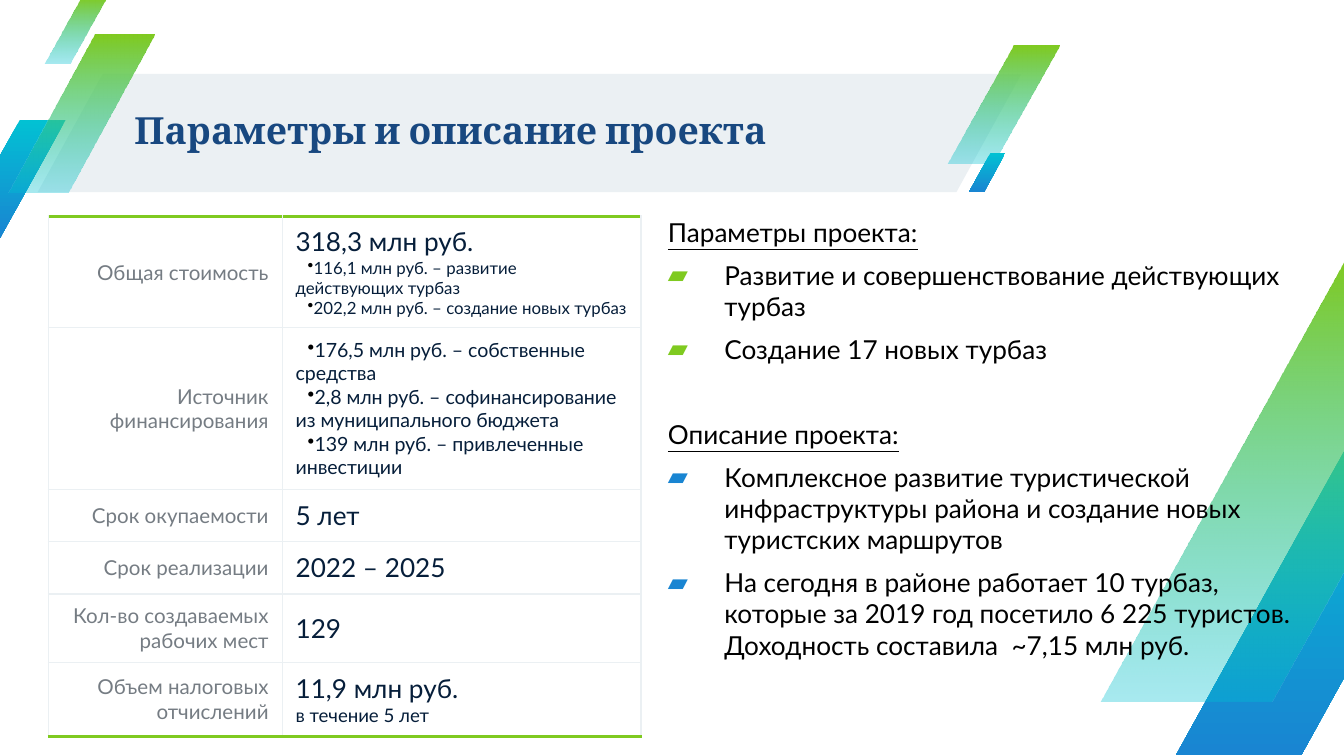
from typing import NamedTuple

import pptx
import pptx.dml.color
import pptx.enum.shapes
import pptx.enum.text
import pptx.oxml
import pptx.oxml.ns
import pptx.util

Inches, Pt = pptx.util.Inches, pptx.util.Pt
PP_ALIGN = pptx.enum.text.PP_ALIGN
MIDDLE = pptx.enum.text.MSO_ANCHOR.MIDDLE
SLANT = pptx.enum.shapes.MSO_SHAPE.PARALLELOGRAM
NS = pptx.oxml.ns.nsdecls("a")

HUES = {"band": "EBF0F3", "green": "7FCA20", "cyan": "02C1D3", "blue": "1985D2",
        "title": "184880", "label": "757C83", "value": "061E3A", "black": "000000"}


class Stripe(NamedTuple):
    left: float
    top: float
    width: float
    height: float
    hue: str


class Line(NamedTuple):
    text: str
    size: float = 14
    dot: bool = False


class Row(NamedTuple):
    label: str
    height: float
    lines: list[Line]


class Part(NamedTuple):
    head: str
    hue: str
    gap: float
    items: list[str]


STRIPES = [
    Stripe(-0.34, 0.89, 0.83, 0.88, "blue"),
    Stripe(7.05, 0.34, 0.83, 0.88, "green"),
    Stripe(0.06, 0.26, 1.09, 1.17, "green"),
    Stripe(0.33, -0.02, 0.46, 0.49, "green"),
    Stripe(7.21, 1.14, 0.27, 0.29, "blue"),
    Stripe(8.75, 3.2, 2.27, 2.42, "blue"),
    Stripe(8.19, 1.92, 3.1, 3.3, "green"),
]

ROWS = [
    Row("Общая стоимость", 0.83, [
        Line("318,3 млн руб."),
        Line("116,1 млн руб. – развитие действующих турбаз", 9, True),
        Line("202,2 млн руб. – создание новых турбаз", 9, True)]),
    Row("Источник финансирования", 1.2, [
        Line("176,5 млн руб. – собственные средства", 10.5, True),
        Line("2,8 млн руб. – софинансирование из муниципального бюджета", 10.5, True),
        Line("139 млн руб. – привлеченные инвестиции", 10.5, True)]),
    Row("Срок окупаемости", 0.39, [Line("5 лет")]),
    Row("Срок реализации", 0.39, [Line("2022 – 2025")]),
    Row("Кол-во создаваемых рабочих мест", 0.51, [Line("129")]),
    Row("Объем налоговых отчислений", 0.55, [
        Line("11,9 млн руб."), Line("в течение 5 лет", 10)]),
]

PARTS = [
    Part("Параметры проекта:", "green", 6, [
        "Развитие и совершенствование действующих турбаз",
        "Создание 17 новых турбаз"]),
    Part("Описание проекта:", "blue", 29, [
        "Комплексное развитие туристической инфраструктуры района и создание "
        "новых туристских маршрутов",
        "На сегодня в районе работает 10 турбаз, которые за 2019 год посетило "
        "6 225 туристов. Доходность составила  ~7,15 млн руб."]),
]


def color(hue: str) -> pptx.dml.color.RGBColor:
    return pptx.dml.color.RGBColor.from_string(HUES[hue])


def style(par, size: float, hue: str, face: str = "Lato") -> None:
    par.font.size, par.font.name = Pt(size), face
    par.font.color.rgb = color(hue)


def indent(par, left: float, first: float, mark: str = "", hue: str = "black") -> None:
    """Set the indents, and the bullet if there is a mark."""
    props = par._p.get_or_add_pPr()
    props.set("marL", str(Inches(left)))
    props.set("indent", str(Inches(first)))
    if mark:
        tags = [f'<a:buClr {NS}><a:srgbClr val="{HUES[hue]}"/></a:buClr>',
                f'<a:buChar {NS} char="{mark}"/>']
    else:
        tags = [f"<a:buNone {NS}/>"]
    for tag in tags:
        props.append(pptx.oxml.parse_xml(tag))


def add_par(frame, index: int, text: str):
    par = frame.paragraphs[0] if index == 0 else frame.add_paragraph()
    par.text = text
    return par


def add_slant(slide, box: tuple, skew: float):
    shape = slide.shapes.add_shape(SLANT, *map(Inches, box))
    shape.adjustments[0] = skew
    shape.shadow.inherit = False
    shape.line.fill.background()
    return shape


def add_stripe(slide, stripe: Stripe) -> None:
    fill = add_slant(slide, stripe[:4], 0.59).fill
    fill.gradient()
    fill.gradient_angle = 270
    fade = stripe.hue == "green"
    ends = ("green", "cyan") if fade else ("cyan", "blue")
    for stop, hue in zip(fill.gradient_stops, ends):
        stop.color.rgb = color(hue)
    if fade:
        last = fill.gradient_stops[1]._gs[0]
        last.append(pptx.oxml.parse_xml(f'<a:alpha {NS} val="34000"/>'))


def edge(cell, top: bool, bottom: bool) -> None:
    """Draw thin cell borders, with a green one at the table's top or bottom."""
    props = cell._tc.get_or_add_tcPr()
    for at, (side, bold) in enumerate(zip("LRTB", (False, False, top, bottom))):
        hue, wide = ("green", 1.5) if bold else ("band", 0.75)
        props.insert(at, pptx.oxml.parse_xml(
            f'<a:ln{side} {NS} w="{Pt(wide)}"><a:solidFill>'
            f'<a:srgbClr val="{HUES[hue]}"/></a:solidFill></a:ln{side}>'))


def add_grid(slide, rows: list[Row]) -> None:
    total = sum(row.height for row in rows)
    box = map(Inches, (0.36, 1.61, 4.41, total))
    table = slide.shapes.add_table(len(rows), 2, *box).table
    table.first_row = table.horz_banding = False
    table.columns[0].width, table.columns[1].width = Inches(1.74), Inches(2.67)
    for at, row in enumerate(rows):
        table.rows[at].height = Inches(row.height)
        name, value = table.cell(at, 0), table.cell(at, 1)
        for cell in (name, value):
            cell.vertical_anchor = MIDDLE
            cell.margin_left = cell.margin_right = Inches(0.1)
            cell.margin_top = cell.margin_bottom = Inches(0.07)
            cell.fill.background()
            edge(cell, at == 0, at == len(rows) - 1)
        par = add_par(name.text_frame, 0, row.label)
        par.alignment = PP_ALIGN.RIGHT
        style(par, 11, "label")
        for index, line in enumerate(row.lines):
            par = add_par(value.text_frame, index, line.text)
            if line.dot:
                indent(par, 0, 0.09, "•")
            style(par, line.size, "value")


def place(shape, *box: float):
    """Move a placeholder to the front and clear its margins."""
    shape.left, shape.top, shape.width, shape.height = map(Inches, box)
    shape._element.getparent().append(shape._element)
    frame = shape.text_frame
    frame.margin_left = frame.margin_right = 0
    frame.margin_top = frame.margin_bottom = 0
    frame.word_wrap = True
    frame.auto_size = pptx.enum.text.MSO_AUTO_SIZE.NONE
    return frame


def fill_list(frame, parts: list[Part]) -> None:
    count = 0
    for part in parts:
        for text in (part.head, *part.items):
            par = add_par(frame, count, text)
            head = text == part.head
            par.space_before = Pt(part.gap if head else 6)
            if head:
                indent(par, 0.08, 0)
            else:
                indent(par, 0.5, -0.42, "▰", part.hue)
            style(par, 14, "black")
            par.font.underline = head
            count += 1


def main() -> None:
    deck = pptx.Presentation()
    deck.slide_width = Inches(10)
    deck.slide_height = deck.slide_width * 9 // 16
    slide = deck.slides.add_slide(deck.slide_layouts[1])
    band = add_slant(slide, (0.28, 0.55, 7.32, 0.88), 0.55)
    band.fill.solid()
    band.fill.fore_color.rgb = color("band")
    for stripe in STRIPES:
        add_stripe(slide, stripe)
    frame = place(slide.shapes.title, 1, 0.54, 6.59, 0.89)
    frame.vertical_anchor = MIDDLE
    par = add_par(frame, 0, "Параметры и описание проекта")
    par.alignment, par.line_spacing = PP_ALIGN.LEFT, 0.9
    style(par, 20, "title", "Cambria")
    par.font.bold = True
    add_grid(slide, ROWS)
    fill_list(place(slide.placeholders[1], 4.89, 1.61, 4.94, 3.28), PARTS)
    deck.save("out.pptx")


if __name__ == "__main__":
    main()
